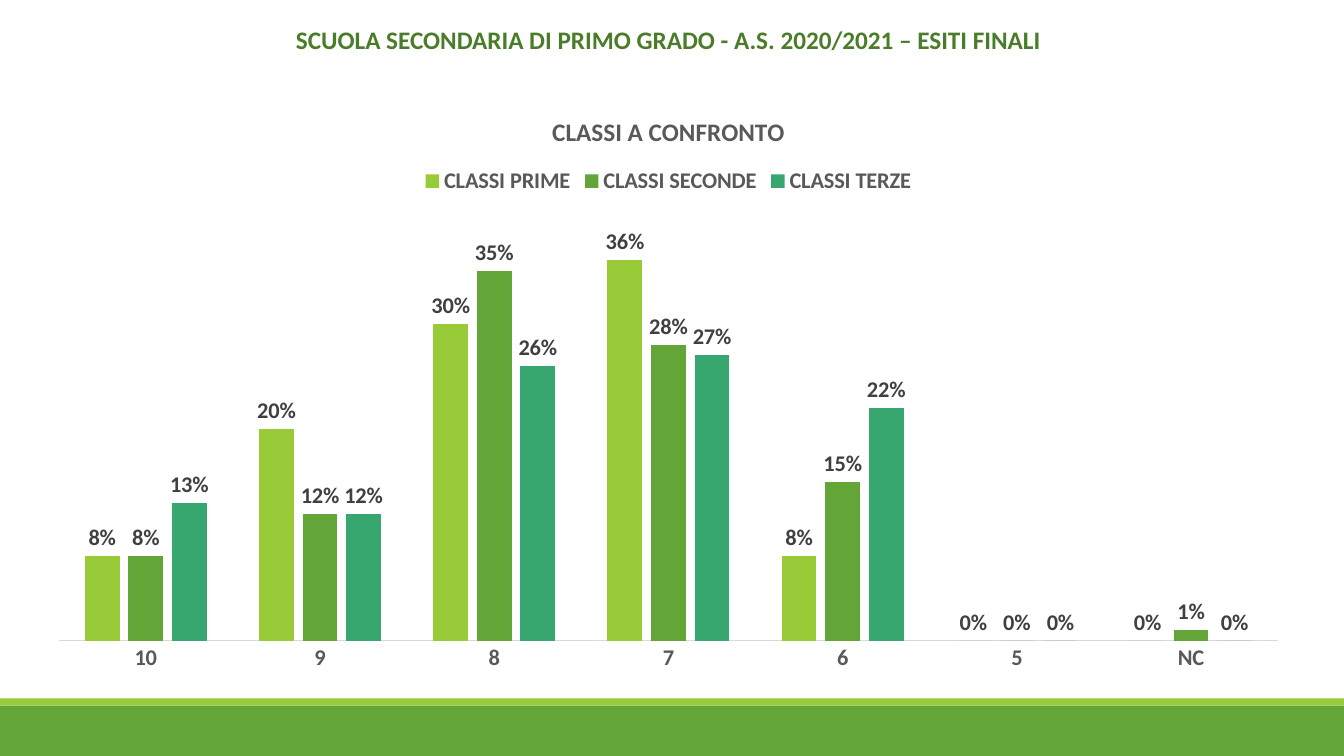
from lxml import etree
from pptx import Presentation
from pptx import util as u
from pptx.chart.data import CategoryChartData
from pptx.dml.color import RGBColor
from pptx.enum import chart as ch, shapes, text
from pptx.oxml.ns import qn

COLORS = {
    "lime": "99CB38", "green": "63A537", "teal": "37A76F", "heading": "4A7C29",
    "gray": "595959", "label": "404040", "axis": "D9D9D9",
}
FONT = "Calibri"
HEADING = "SCUOLA SECONDARIA DI PRIMO GRADO - A.S. 2020/2021 – ESITI FINALI"
CHART_TITLE = "CLASSI A CONFRONTO"
GRADES = ["10", "9", "8", "7", "6", "5", "NC"]
CLASSES = [
    ("CLASSI PRIME", "lime", (0.08, 0.2, 0.3, 0.36, 0.08, 0, 0)),
    ("CLASSI SECONDE", "green", (0.08, 0.12, 0.35, 0.28, 0.15, 0, 0.01)),
    ("CLASSI TERZE", "teal", (0.13, 0.12, 0.26, 0.27, 0.22, 0, 0)),
]
BANDS = [("green", 7, 0.5), ("lime", 6.93, 0.07)]  # colour, top, height
PLOT_LAYOUT = {"x": 0.02, "y": 0.21, "w": 0.96, "h": 0.71}  # fractions of the chart


def rgb(name):
    return RGBColor.from_string(COLORS[name])


def style(font, size, color):
    font.name, font.size, font.bold = FONT, u.Pt(size), True
    font.color.rgb = rgb(color)


def place_plot(chart):
    """Fix the inner plot area at PLOT_LAYOUT."""
    plot_area = chart.plots[0]._element.getparent()
    for old in plot_area.findall(qn("c:layout")):
        plot_area.remove(old)
    layout = etree.Element(qn("c:layout"))
    manual = etree.SubElement(layout, qn("c:manualLayout"))
    settings = {"layoutTarget": "inner", "xMode": "edge", "yMode": "edge", **PLOT_LAYOUT}
    for tag, value in settings.items():
        etree.SubElement(manual, qn(f"c:{tag}")).set("val", str(value))
    plot_area.insert(0, layout)


def add_bands(slide, width):
    for color, top, height in BANDS:
        band = slide.shapes.add_shape(shapes.MSO_SHAPE.RECTANGLE, 0, u.Inches(top),
                                      width, u.Inches(height))
        band.shadow.inherit = False
        band.fill.solid()
        band.fill.fore_color.rgb = rgb(color)
        band.line.fill.background()


def add_results_chart(slide):
    results = CategoryChartData(number_format="0%")
    results.categories = GRADES
    for name, _, shares in CLASSES:
        results.add_series(name, shares)
    chart = slide.shapes.add_chart(
        ch.XL_CHART_TYPE.COLUMN_CLUSTERED, u.Inches(0.33), u.Inches(0.92),
        u.Inches(12.6), u.Inches(5.91), results).chart
    style(chart.font, 16, "gray")

    chart.has_title = True
    title = chart.chart_title.text_frame
    title.text = CHART_TITLE
    style(title.paragraphs[0].font, 18, "gray")

    chart.has_legend = True
    chart.legend.position = ch.XL_LEGEND_POSITION.TOP
    chart.legend.include_in_layout = False
    style(chart.legend.font, 16, "gray")

    grade_axis, share_axis = chart.category_axis, chart.value_axis
    grade_axis.major_tick_mark = ch.XL_TICK_MARK.NONE
    grade_axis.format.line.color.rgb = rgb("axis")
    grade_axis.format.line.width = u.Pt(0.75)
    style(grade_axis.tick_labels.font, 16, "gray")
    share_axis.minimum_scale, share_axis.maximum_scale = 0, 0.4
    share_axis.has_major_gridlines = False
    share_axis.visible = False

    plot = chart.plots[0]
    plot.gap_width, plot.overlap = 150, -25
    plot.vary_by_categories = False
    for series, (_, color, _) in zip(plot.series, CLASSES):
        series.format.fill.solid()
        series.format.fill.fore_color.rgb = rgb(color)
        series.invert_if_negative = False
        labels = series.data_labels
        labels.show_value = True
        labels.number_format, labels.number_format_is_linked = "0%", False
        labels.position = ch.XL_LABEL_POSITION.OUTSIDE_END
        style(labels.font, 16, "label")
    place_plot(chart)


def add_heading(slide):
    frame = slide.shapes.add_textbox(u.Inches(2.32), u.Inches(0.19),
                                     u.Inches(8.62), u.Inches(0.4)).text_frame
    frame.word_wrap = True
    frame.auto_size = text.MSO_AUTO_SIZE.SHAPE_TO_FIT_TEXT
    heading = frame.paragraphs[0]
    heading.text = HEADING
    heading.alignment = text.PP_ALIGN.CENTER
    style(heading.font, 18, "heading")


def main():
    deck = Presentation()
    deck.slide_width, deck.slide_height = u.Inches(13.33), u.Inches(7.5)
    slide = deck.slides.add_slide(deck.slide_layouts[6])
    add_bands(slide, deck.slide_width)
    add_results_chart(slide)
    add_heading(slide)
    deck.save("out.pptx")


if __name__ == "__main__":
    main()
